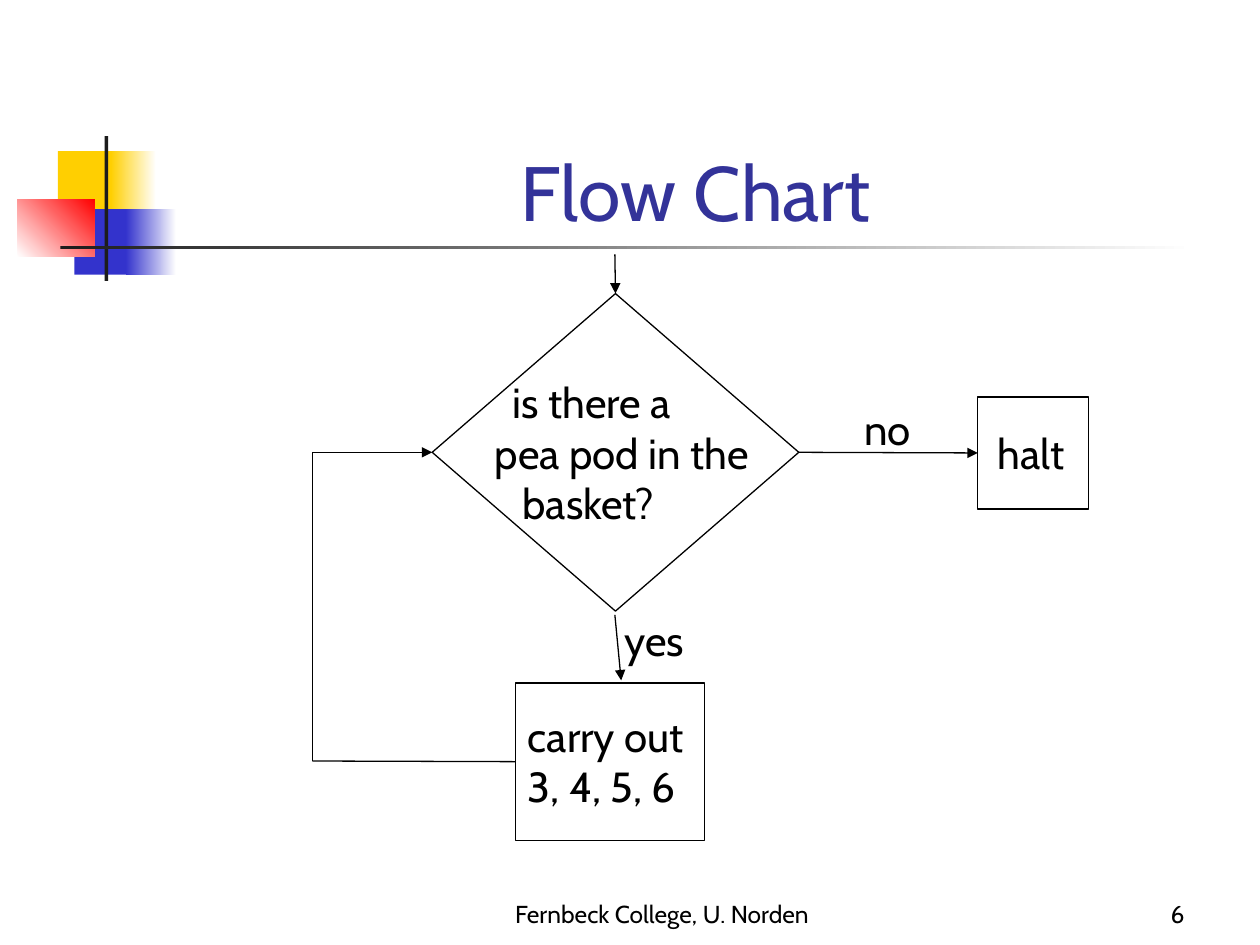
from dataclasses import dataclass

from lxml.etree import SubElement
from pptx import Presentation
from pptx.dml.color import RGBColor
from pptx.enum.shapes import MSO_CONNECTOR, MSO_SHAPE
from pptx.enum.text import MSO_ANCHOR, PP_ALIGN
from pptx.oxml.ns import qn
from pptx.util import Inches, Pt


@dataclass(frozen=True)
class Theme:
    font: str = "Cabin"
    ink: str = "000000"
    title: str = "333399"
    paper: str = "FFFFFF"
    yellow: str = "FFCF01"
    blue: str = "3333CC"
    red: str = "FF0000"
    bar: str = "1C1C1C"
    title_size: int = 44
    body_size: int = 24
    footer_size: int = 14
    line_width: float = 0.75


theme = Theme()
TOP, LEFT, BOTTOM, RIGHT = range(4)

deck = Presentation()
deck.slide_width, deck.slide_height = Inches(10), Inches(7.5)
page = deck.slides.add_slide(deck.slide_layouts[6])


def add_box(kind, place):
    box = page.shapes.add_shape(kind, *map(Inches, place))
    box.shadow.inherit = False
    return box


def add_text(place, lines, size=theme.body_size, color=theme.ink, wrap=False,
             align=PP_ALIGN.LEFT, anchor=MSO_ANCHOR.TOP):
    """Each line is a pair of wording and left indent in inches."""
    frame = page.shapes.add_textbox(*map(Inches, place)).text_frame
    for name, value in {"word_wrap": wrap, "vertical_anchor": anchor}.items():
        setattr(frame, name, value)
    for index, (wording, indent) in enumerate(lines):
        para = frame.add_paragraph() if index else frame.paragraphs[0]
        para.alignment = align
        if indent:
            para._p.get_or_add_pPr().set("marL", str(Inches(indent)))
        span = para.add_run()
        span.text = wording
        for name, value in {"name": theme.font, "size": Pt(size)}.items():
            setattr(span.font, name, value)
        span.font.color.rgb = RGBColor.from_string(color)


# Corner ornament: place, colours (one is solid, two are a gradient), angle
ornament = [
    ((0.46, 1.2, 0.48, 0.52), [theme.yellow], 0),
    ((0.88, 1.2, 0.36, 0.52), [theme.yellow, theme.paper], 0),
    ((0.59, 1.66, 0.46, 0.52), [theme.blue], 0),
    ((1, 1.66, 0.4, 0.52), [theme.blue, theme.paper], 0),
    ((0.14, 1.58, 0.61, 0.46), [theme.paper, theme.red], 45),
    ((0.83, 1.08, 0.03, 1.15), [theme.bar], 0),
    ((0.48, 1.95, 9, 0.03), [theme.bar, theme.paper], 0),
]
for place, colors, angle in ornament:
    box = add_box(MSO_SHAPE.RECTANGLE, place)
    box.line.fill.background()
    if len(colors) == 1:
        box.fill.solid()
        box.fill.fore_color.rgb = RGBColor.from_string(colors[0])
    else:
        box.fill.gradient()
        box.fill.gradient_angle = angle
        for position, (stop, color) in enumerate(zip(box.fill.gradient_stops, colors)):
            stop.position = position
            stop.color.rgb = RGBColor.from_string(color)

# Title and footer
add_text((1.26, 0.68, 8.52, 1.25), [("Flow Chart", 0)], theme.title_size,
         theme.title, True, PP_ALIGN.CENTER, MSO_ANCHOR.BOTTOM)
add_text((3.67, 6.92, 3.17, 0.5), [("Fernbeck College, U. Norden", 0)],
         theme.footer_size, theme.ink, True, PP_ALIGN.CENTER, MSO_ANCHOR.BOTTOM)
add_text((7.42, 6.92, 2.08, 0.5), [("6", 0)],
         theme.footer_size, theme.ink, True, PP_ALIGN.RIGHT, MSO_ANCHOR.BOTTOM)

# Flow chart boxes
decision = add_box(MSO_SHAPE.FLOWCHART_DECISION, (3.43, 2.33, 2.91, 2.52))
halt = add_box(MSO_SHAPE.RECTANGLE, (7.76, 3.15, 0.88, 0.89))
action = add_box(MSO_SHAPE.RECTANGLE, (4.09, 5.42, 1.5, 1.25))
for box in (decision, halt, action):
    box.fill.background()
    box.line.color.rgb = RGBColor.from_string(theme.ink)
    box.line.width = Pt(theme.line_width)

# Wording of the boxes and branches
add_text((3.83, 2.94, 2.47, 1.31),
         [("is there a", 0.14), ("pea pod in the", 0), ("basket?", 0.22)], wrap=True)
add_text((7.82, 3.34, 0.76, 0.51), [("halt", 0)])
add_text((6.76, 3.15, 0.57, 0.51), [("no", 0)])
add_text((4.09, 5.59, 1.58, 0.91), [("carry out", 0), ("3, 4, 5, 6", 0)])
add_text((4.86, 4.83, 0.7, 0.51), [("yes", 0)])

# Lines: start, end, joined start, joined end, arrowhead
loop_x, decision_y, action_y = 2.48, 3.59, 6.04
lines = [
    ((4.88, 2.02), (4.88, 2.33), None, (decision, TOP), True),
    ((6.34, decision_y), (7.76, decision_y), (decision, RIGHT), (halt, LEFT), True),
    ((4.88, 4.88), (4.93, 5.4), None, None, True),
    ((4.09, action_y), (loop_x, action_y), (action, LEFT), None, False),
    ((loop_x, action_y), (loop_x, decision_y), None, None, False),
    ((loop_x, decision_y), (3.43, decision_y), None, (decision, LEFT), True),
]
for start, end, source, target, arrow in lines:
    line = page.shapes.add_connector(MSO_CONNECTOR.STRAIGHT, *map(Inches, start + end))
    if source:
        line.begin_connect(*source)
    if target:
        line.end_connect(*target)
    line.line.color.rgb = RGBColor.from_string(theme.ink)
    line.line.width = Pt(theme.line_width)
    if arrow:
        SubElement(line.line._get_or_add_ln(), qn("a:tailEnd"), type="triangle")
    SubElement(line._element.spPr, qn("a:effectLst"))

deck.save("out.pptx")
